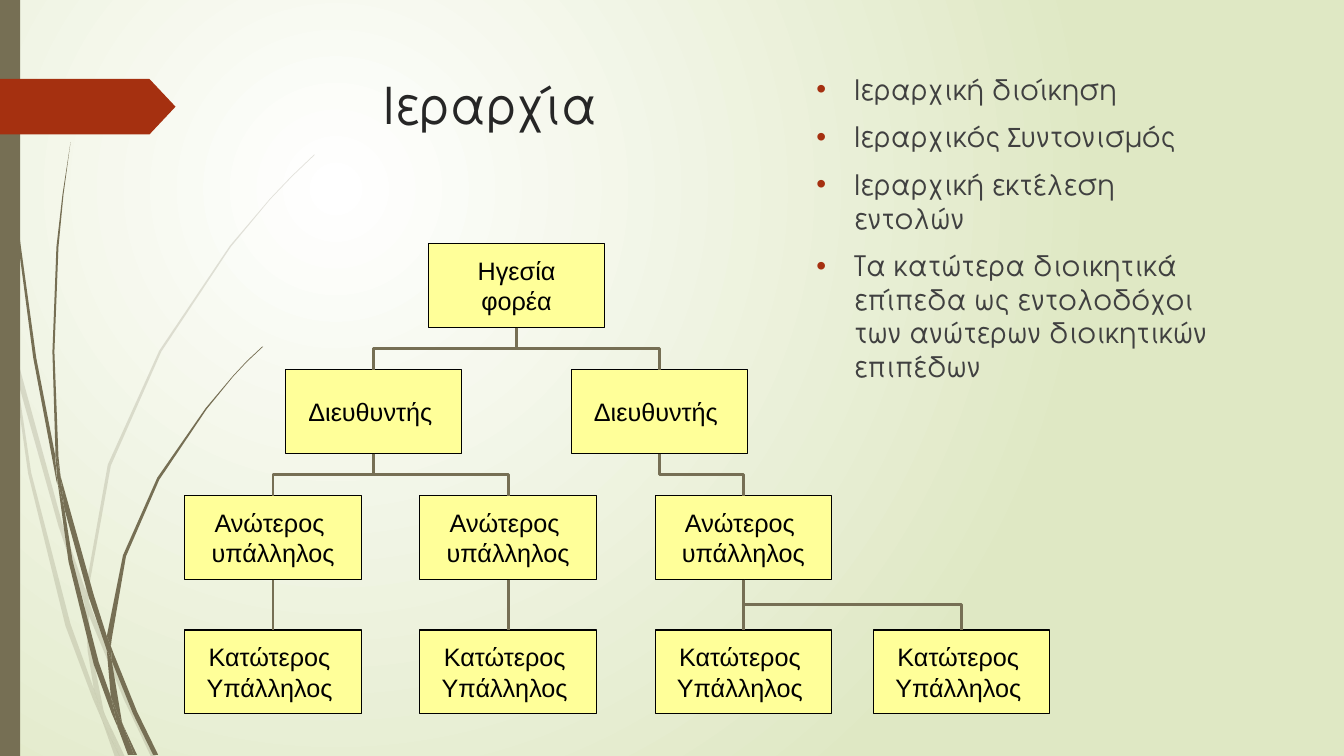
"""Build the slide on hierarchy: an organisation chart beside four bullet points."""
from typing import NamedTuple

from lxml import etree
from pptx import Presentation
from pptx.dml.color import RGBColor
from pptx.enum.shapes import MSO_CONNECTOR, MSO_SHAPE
from pptx.enum.text import MSO_ANCHOR, MSO_AUTO_SIZE, PP_ALIGN
from pptx.oxml.ns import qn
from pptx.util import Inches, Pt

WHITE = RGBColor(0xFF, 0xFF, 0xFF)
PALE_GREEN = RGBColor(0xDF, 0xE8, 0xC4)
OLIVE = RGBColor(0x76, 0x6F, 0x54)
RUST = RGBColor(0xA5, 0x30, 0x10)
YELLOW = RGBColor(0xFF, 0xFF, 0x99)
BLACK = RGBColor(0x00, 0x00, 0x00)
TITLE_GREY = RGBColor(0x26, 0x26, 0x26)
BODY_GREY = RGBColor(0x40, 0x40, 0x40)

RECTANGLE, PENTAGON = MSO_SHAPE.RECTANGLE, MSO_SHAPE.PENTAGON
STRAIGHT, ELBOW = MSO_CONNECTOR.STRAIGHT, MSO_CONNECTOR.ELBOW
TOP, MIDDLE = MSO_ANCHOR.TOP, MSO_ANCHOR.MIDDLE
LEFT, CENTER = PP_ALIGN.LEFT, PP_ALIGN.CENTER
NO_AUTOFIT = MSO_AUTO_SIZE.NONE

GRID, FINE_GRID = 12, 100
COLUMNS, ROWS = 160, 90
POST_COLUMNS, POST_ROWS = 21, 10
QUARTER_TURN = 5400000

HEADING_FONT = "TeX Gyre Adventor"
TITLE_FORMAT = {"name": HEADING_FONT, "size": Pt(36), "bold": False}
BODY_FORMAT = {"name": HEADING_FONT, "size": Pt(20)}
POST_FORMAT = {"name": "Arial", "size": Pt(18)}


class Post(NamedTuple):
    """A box of the chart, with its grid place and the key of its superior."""
    column: int
    row: int
    lines: tuple[str, ...]
    superior: str = ""


class Grass(NamedTuple):
    """Blades of one opacity in percent, each a run of x and y on the fine grid."""
    opacity: int
    blades: tuple[tuple[int, ...], ...]


DIRECTOR = ("Διευθυντής ",)
SENIOR = ("Ανώτερος ", "υπάλληλος")
JUNIOR = ("Κατώτερος ", "Υπάλληλος ")

POSTS = {
    "head": Post(51, 29, ("Ηγεσία", " φορέα ")),
    "director 2": Post(68, 44, DIRECTOR, "head"),
    "director 1": Post(34, 44, DIRECTOR, "head"),
    "senior 1": Post(22, 59, SENIOR, "director 1"),
    "senior 2": Post(50, 59, SENIOR, "director 1"),
    "senior 3": Post(78, 59, SENIOR, "director 2"),
    "junior 1": Post(22, 75, JUNIOR, "senior 1"),
    "junior 2": Post(50, 75, JUNIOR, "senior 2"),
    "junior 3": Post(78, 75, JUNIOR, "senior 3"),
    "junior 4": Post(104, 75, JUNIOR, "senior 3"),
}

PRINCIPLES = (
    "Ιεραρχική διοίκηση",
    "Ιεραρχικός Συντονισμός",
    "Ιεραρχική εκτέλεση εντολών",
    "Τα κατώτερα διοικητικά επίπεδα ως εντολοδόχοι των ανώτερων διοικητικών επιπέδων",
)

PALE_GRASS = Grass(20, (
    (11, 350, 9, 322, 0, 282, 0, 299, 10, 344),
    (58, 522, 84, 599, 85, 586, 62, 520, 14, 345, 17, 376),
    (92, 607, 88, 596, 88, 610, 123, 694, 150, 751, 155, 751, 127, 692),
    (119, 751, 124, 751, 105, 711),
    (93, 683, 70, 619, 31, 469, 17, 376, 11, 350, 28, 470, 65, 621, 92, 693, 101, 714, 99, 707),
    (84, 599, 87, 646, 93, 683, 96, 692, 105, 711, 103, 706, 91, 646, 88, 610, 88, 608),
    (88, 584, 110, 462, 160, 349, 229, 245, 268, 198, 290, 175, 312, 154, 312, 153, 289, 175,
     268, 197, 228, 244, 158, 348, 107, 461, 85, 584, 85, 586, 88, 596),
    (101, 714, 114, 751, 119, 751),
    (88, 608, 88, 610, 88, 596, 85, 586, 84, 599),
    (96, 692, 93, 683, 99, 707, 101, 714, 119, 751, 105, 711),
))
DARK_GRASS = Grass(100, (
    (7, 110, 17, 233, 33, 355, 56, 477, 57, 481, 55, 457, 55, 453, 36, 355, 19, 232, 8, 109,
     5, 48, 4, 0, 3, 0, 4, 48),
    (88, 592, 106, 645, 106, 631, 93, 590, 60, 472, 64, 505),
    (113, 649, 110, 641, 111, 656, 132, 708, 152, 749, 157, 749, 136, 706),
    (110, 691, 98, 657, 72, 556, 64, 505, 57, 477, 68, 557, 93, 659, 111, 708, 117, 722, 116, 717),
    (60, 472, 58, 453, 54, 349, 58, 245, 63, 193, 70, 141, 62, 193, 56, 245, 52, 349, 55, 449),
    (133, 749, 136, 749, 122, 719),
    (57, 477, 64, 505, 60, 472, 55, 449, 55, 453),
    (111, 633, 125, 552, 158, 476, 205, 406, 231, 374, 245, 359, 261, 344, 260, 344, 245, 358,
     231, 373, 204, 405, 156, 474, 122, 551, 106, 631, 110, 641),
    (117, 722, 127, 749, 131, 749),
    (106, 645, 110, 691, 116, 706, 122, 719, 121, 716, 111, 656, 109, 651),
    (106, 645, 109, 651, 111, 656, 110, 641, 106, 631),
    (116, 706, 110, 691, 116, 717, 117, 722, 130, 749, 133, 749, 122, 719),
))


def grid(cells: float, density: int = GRID) -> int:
    """Turn grid cells into a slide length."""
    return Inches(cells / density)


def apply_format(target, values: dict) -> None:
    """Set every attribute that the format values name."""
    for name, value in values.items():
        setattr(target, name, value)


def paint(shape, color: RGBColor) -> None:
    """Fill a shape flat, without outline."""
    shape.shadow.inherit = False
    shape.fill.solid()
    shape.fill.fore_color.rgb = color
    shape.line.fill.background()


def draw_background(slide) -> None:
    """Spread a round gradient from the upper left of the slide."""
    fill = slide.background.fill
    fill.gradient()
    for stop, color, position in zip(fill.gradient_stops, (WHITE, PALE_GREEN), (0, 1)):
        stop.position = position
        stop.color.rgb = color
    gradient = slide.element.find(".//" + qn("a:gradFill"))
    gradient.remove(gradient.find(qn("a:lin")))
    circle = etree.SubElement(gradient, qn("a:path"), path="circle")
    etree.SubElement(circle, qn("a:fillToRect"), l="50000", t="50000", r="100000", b="100000")


def draw_grass(slide, grass: Grass) -> None:
    """Draw every blade as a closed outline."""
    for blade in grass.blades:
        lengths = [grid(value, FINE_GRID) for value in blade]
        start, *others = zip(lengths[::2], lengths[1::2])
        builder = slide.shapes.build_freeform(*start)
        builder.add_line_segments(others, close=True)
        stalk = builder.convert_to_shape()
        paint(stalk, OLIVE)
        if grass.opacity < 100:
            color = stalk.element.spPr.find(qn("a:solidFill"))[0]
            etree.SubElement(color, qn("a:alpha"), val=str(grass.opacity * 1000))


def draw_post(slide, post: Post) -> None:
    """Draw one box of the chart with its centred lines."""
    place = map(grid, (post.column, post.row, POST_COLUMNS, POST_ROWS))
    box = slide.shapes.add_shape(RECTANGLE, *place)
    paint(box, YELLOW)
    box.line.color.rgb = BLACK
    box.line.width = Pt(0.75)
    apply_format(box.text_frame, {"text": "\n".join(post.lines), "word_wrap": False,
                                  "vertical_anchor": MIDDLE})
    for line in box.text_frame.paragraphs:
        line.alignment = CENTER
        apply_format(line.font, POST_FORMAT)
        line.font.color.rgb = BLACK


def draw_link(slide, superior: Post, post: Post) -> None:
    """Link the foot of the superior's box to the top of the post's box."""
    start, end = superior.column + POST_COLUMNS / 2, post.column + POST_COLUMNS / 2
    foot, head = superior.row + POST_ROWS, post.row
    kind, ends = STRAIGHT, (start, foot, end, head)
    if start != end:
        x, y = (start + end) / 2, (foot + head) / 2
        reach = (head - foot) / 2 * (1 if end > start else -1)
        half_span = abs(end - start) / 2
        kind, ends = ELBOW, (x + reach, y - half_span, x - reach, y + half_span)
    link = slide.shapes.add_connector(kind, *map(grid, ends))
    if kind == ELBOW:
        turns = 3 if end > start else 1
        link.element.spPr.find(qn("a:xfrm")).set("rot", str(turns * QUARTER_TURN))
    link.line.color.rgb = OLIVE
    link.line.width = Pt(2)
    etree.SubElement(link.element.spPr, qn("a:effectLst"))


def write_title(slide) -> None:
    """Place and format the title."""
    title = slide.shapes.title
    apply_format(title, {"left": grid(44.5), "top": grid(8.2),
                         "width": grid(106.5), "height": grid(16.8)})
    apply_format(title.text_frame, {"text": "Ιεραρχία", "vertical_anchor": TOP,
                                    "word_wrap": True, "auto_size": NO_AUTOFIT})
    heading = title.text_frame.paragraphs[0]
    heading.alignment = LEFT
    apply_format(heading.font, TITLE_FORMAT)
    heading.font.color.rgb = TITLE_GREY


def write_principles(slide) -> None:
    """Write the bullet points at the right."""
    body = slide.shapes.add_textbox(grid(96), grid(8), grid(49.5), grid(76))
    apply_format(body.text_frame, {"text": "\n".join(PRINCIPLES), "word_wrap": True})
    for index, principle in enumerate(body.text_frame.paragraphs):
        properties = principle._p.get_or_add_pPr()
        properties.set("marL", str(grid(4.5)))
        properties.set("indent", str(-grid(4.5)))
        color = etree.SubElement(properties, qn("a:buClr"))
        etree.SubElement(color, qn("a:srgbClr"), val=str(RUST))
        etree.SubElement(properties, qn("a:buFont"), typeface="Arial")
        etree.SubElement(properties, qn("a:buChar"), char="•")
        principle.space_before = Pt(10 if index else 0)
        apply_format(principle.font, BODY_FORMAT)
        principle.font.color.rgb = BODY_GREY


def main() -> None:
    """Build and save the slide."""
    deck = Presentation()
    apply_format(deck, {"slide_width": grid(COLUMNS), "slide_height": grid(ROWS)})
    slide = deck.slides.add_slide(deck.slide_layouts[5])
    draw_background(slide)
    for grass in (PALE_GRASS, DARK_GRASS):
        draw_grass(slide, grass)
    paint(slide.shapes.add_shape(RECTANGLE, 0, 0, grid(2.4), grid(ROWS)), OLIVE)
    marker = slide.shapes.add_shape(PENTAGON, 0, grid(9.4), grid(20.9), grid(6.6))
    marker.adjustments[0] = 0.47
    paint(marker, RUST)
    write_title(slide)
    write_principles(slide)
    for post in POSTS.values():
        draw_post(slide, post)
    for post in POSTS.values():
        if post.superior:
            draw_link(slide, POSTS[post.superior], post)
    deck.save("out.pptx")


if __name__ == "__main__":
    main()
